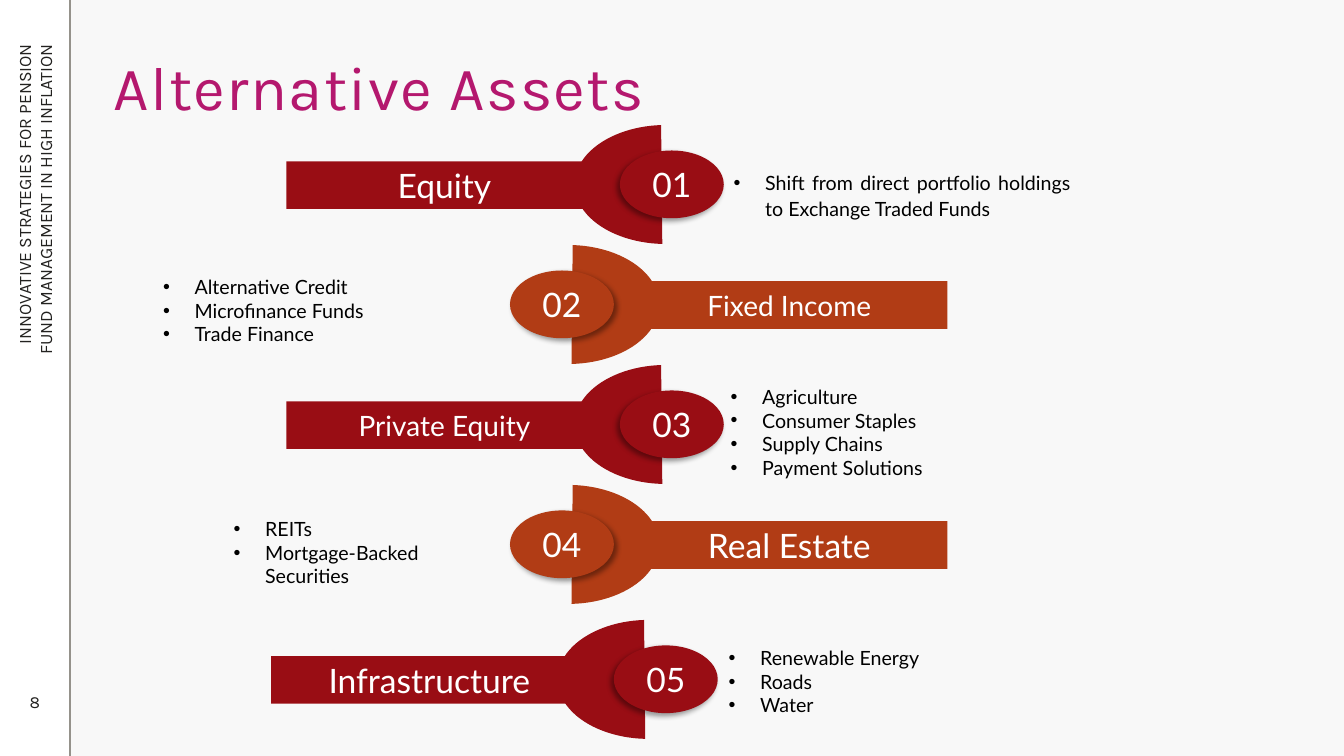
import pptx
import pptx.util
import pptx.dml.color
import pptx.enum.shapes
import pptx.enum.text
import pptx.oxml
import pptx.oxml.ns

Pt = pptx.util.Pt
RGBColor = pptx.dml.color.RGBColor
SHAPE = pptx.enum.shapes.MSO_SHAPE
ALIGN = pptx.enum.text.PP_ALIGN
ANCHOR = pptx.enum.text.MSO_ANCHOR
NS = pptx.oxml.ns.nsdecls("a")

PAPER = RGBColor(0xF8, 0xF8, 0xF8)
WHITE = RGBColor(0xFF, 0xFF, 0xFF)
BLACK = RGBColor(0, 0, 0)
INK = RGBColor(0x23, 0x22, 0x20)
RULE = RGBColor(0x95, 0x92, 0x8B)
MAGENTA = RGBColor(0xB4, 0x18, 0x6E)
CRIMSON = RGBColor(0x99, 0x0D, 0x14)
RUST = RGBColor(0xB1, 0x3C, 0x15)


class Deck:
    """Holds the style and the current slide."""
    heading_font = "Karla"
    body_font = "Lato"
    bullet_indent = 22.5

    def __init__(self, width, height):
        self.prs = pptx.Presentation()
        self.prs.slide_width, self.prs.slide_height = Pt(width), Pt(height)
        self.slide = self.prs.slides.add_slide(self.prs.slide_layouts[6])
        self.slide.background.fill.solid()
        self.slide.background.fill.fore_color.rgb = PAPER

    def apply(self, target, values):
        for name, value in values.items():
            setattr(target, name, value)

    def add_xml(self, parent, markup):
        parent.append(pptx.oxml.parse_xml(markup))

    def add_text(self, paragraph, text, size, color, font, spacing=0, **layout):
        self.apply(paragraph, layout)
        run = paragraph.add_run()
        run.text = text
        self.apply(run.font, {"size": Pt(size), "name": font})
        run.font.color.rgb = color
        if spacing:
            run._r.get_or_add_rPr().set("spc", str(spacing))

    def frame(self, box, anchor):
        self.apply(box.text_frame, {
            "word_wrap": True, "vertical_anchor": anchor,
            "margin_left": Pt(7.2), "margin_right": Pt(7.2),
            "margin_top": Pt(3.6), "margin_bottom": Pt(3.6)})
        return box.text_frame

    def label(self, at, text, size, color, anchor=ANCHOR.MIDDLE,
              vertical=False, spacing=0, **layout):
        box = self.slide.shapes.add_textbox(*map(Pt, at))
        frame = self.frame(box, anchor)
        if vertical:
            frame._txBody.bodyPr.set("vert", "vert270")
        self.add_text(frame.paragraphs[0], text, size, color,
                      self.heading_font, spacing, **layout)

    def bullets(self, at, items, **layout):
        box = self.slide.shapes.add_textbox(*map(Pt, at))
        frame = self.frame(box, ANCHOR.TOP)
        indent = Pt(self.bullet_indent)
        for i, item in enumerate(items):
            paragraph = frame.add_paragraph() if i else frame.paragraphs[0]
            self.apply(paragraph, layout)
            props = paragraph._p.get_or_add_pPr()
            props.set("marL", str(indent))
            props.set("indent", str(-indent))
            self.add_xml(props, f'<a:buFont {NS} typeface="Arial"/>')
            self.add_xml(props, f'<a:buChar {NS} char="•"/>')
            self.add_text(paragraph, item, 14, BLACK, self.body_font)

    def shape(self, kind, at, fill, text="", size=24):
        shape = self.slide.shapes.add_shape(kind, *map(Pt, at))
        shape.shadow.inherit = False
        shape.fill.solid()
        shape.fill.fore_color.rgb = fill
        shape.line.fill.background()
        if text:
            frame = self.frame(shape, ANCHOR.MIDDLE)
            self.add_text(frame.paragraphs[0], text, size, WHITE,
                          self.body_font, alignment=ALIGN.CENTER)
        return shape

    def drop_shadow(self, shape, degrees):
        effects = shape._element.spPr.find(pptx.oxml.ns.qn("a:effectLst"))
        self.add_xml(effects, f'<a:outerShdw {NS} blurRad="{Pt(4)}" dist="{Pt(3)}" '
                              f'dir="{degrees * 60000}" algn="tl" rotWithShape="0">'
                              '<a:srgbClr val="000000"><a:alpha val="40000"/>'
                              '</a:srgbClr></a:outerShdw>')

    def line(self, x1, y1, x2, y2, color, weight):
        line = self.slide.shapes.add_connector(
            pptx.enum.shapes.MSO_CONNECTOR.STRAIGHT, *map(Pt, (x1, y1, x2, y2)))
        line.line.color.rgb = color
        line.line.width = Pt(weight)
        self.add_xml(line._element.spPr, f"<a:effectLst {NS}/>")

    def asset(self, number, top, name, size, mirrored, shifts):
        """A named bar running into a half disc with a numbered badge."""
        color = RUST if mirrored else CRIMSON

        def place(left, offset, width, height, shift):
            left += shift
            if mirrored:
                left = 881.3 - left - width
            return left, top + offset, width, height

        bar, disc, badge = shifts
        self.shape(SHAPE.RECTANGLE, place(204.5, 25.9, 226, 34, bar),
                   color, name, size)
        half_disc = self.shape(SHAPE.CHORD, place(410.4, 0, 130.3, 85, disc), color)
        start, end = 55.99, 159.33  # 0.6 per degree, so half a turn is 108
        if mirrored:
            start, end = (108 - end) % 216, 108 - start
        half_disc.adjustments[0], half_disc.adjustments[1] = start, end
        oval = self.shape(SHAPE.OVAL, place(442.8, 18.2, 74.2, 48.4, badge),
                          color, f"{number:02}")
        self.drop_shadow(oval, 45 if mirrored else 135)


def main():
    deck = Deck(960, 540)

    # Side strip
    deck.shape(SHAPE.RECTANGLE, (0, 0, 49.7, 540), WHITE)
    deck.line(49.9, 0, 49.9, 540, RULE, 1.5)
    deck.label((8.6, 24.5, 32.4, 245.5),
               "INNOVATIVE STRATEGIES FOR PENSION FUND MANAGEMENT IN HIGH INFLATION",
               12.5, INK, vertical=True, alignment=ALIGN.RIGHT)
    deck.label((0, 486.7, 49.7, 28.8), "8", 12.1, INK, alignment=ALIGN.CENTER)

    # Title
    deck.label((74.2, 24.5, 812.2, 67.7), "Alternative Assets", 44, MAGENTA,
               anchor=ANCHOR.BOTTOM, spacing=100, line_spacing=0.9)

    # Asset classes, alternating sides
    assets = [("Equity", 24), ("Fixed Income", 20), ("Private Equity", 20),
              ("Real Estate", 24), ("Infrastructure", 24)]
    for i, (name, size) in enumerate(assets):
        last = i == len(assets) - 1
        top = 442.8 if last else 89.3 + 85.7 * i
        shifts = (-10.8, -12.2, -4.3) if last else (0, 0, 0)
        deck.asset(i + 1, top, name, size, i % 2 == 1, shifts)

    # Examples beside each class
    deck.bullets((517, 115.9, 254.9, 44.6),
                 ["Shift from direct portfolio holdings to Exchange Traded Funds"],
                 alignment=ALIGN.JUSTIFY, line_spacing=1.14)
    examples = [
        ((109.4, 193, 254.9, 58.3),
         ["Alternative Credit", "Microfinance Funds", "Trade Finance"]),
        ((514.8, 271.4, 171.4, 74.9),
         ["Agriculture", "Consumer Staples", "Supply Chains", "Payment Solutions"]),
        ((159.8, 365.8, 190.8, 58.3), ["REITs", "Mortgage-Backed Securities"]),
        ((513.4, 457.9, 190.8, 58.3), ["Renewable Energy", "Roads", "Water"]),
    ]
    for at, items in examples:
        deck.bullets(at, items)

    deck.prs.save("out.pptx")


if __name__ == "__main__":
    main()
